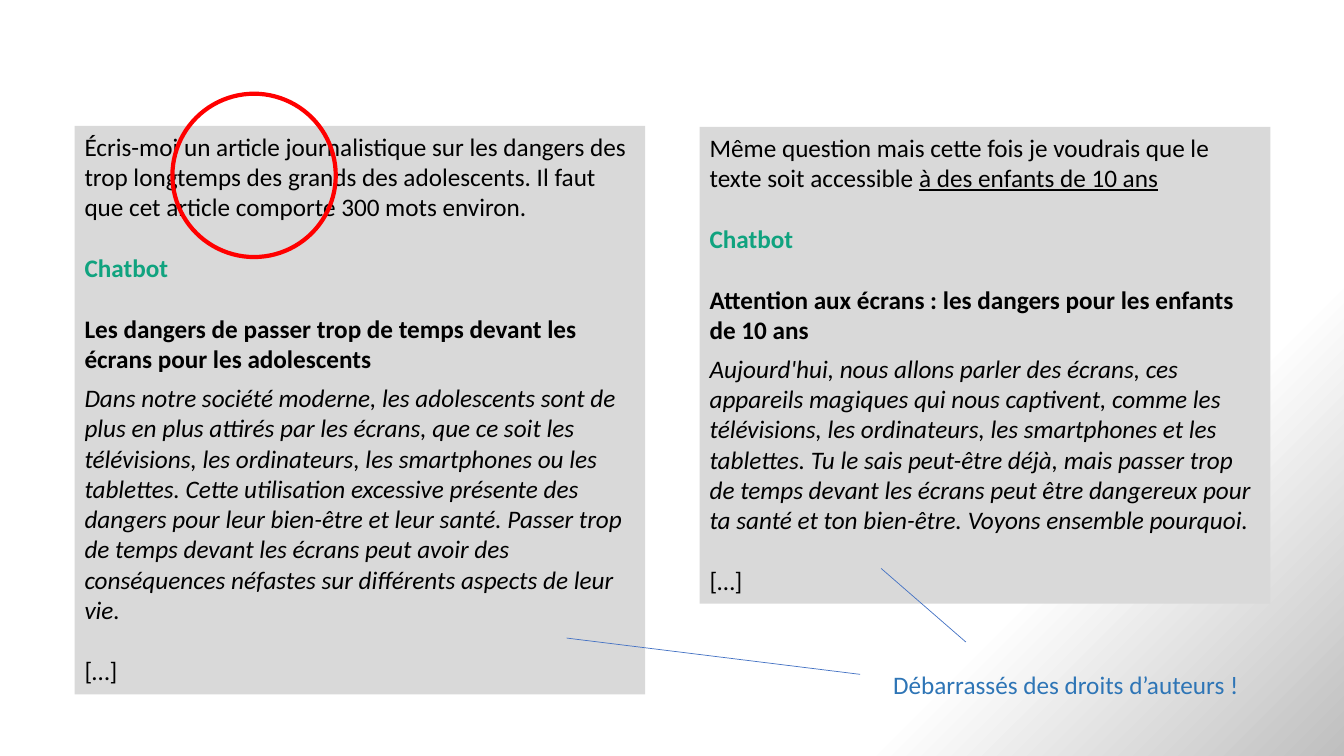
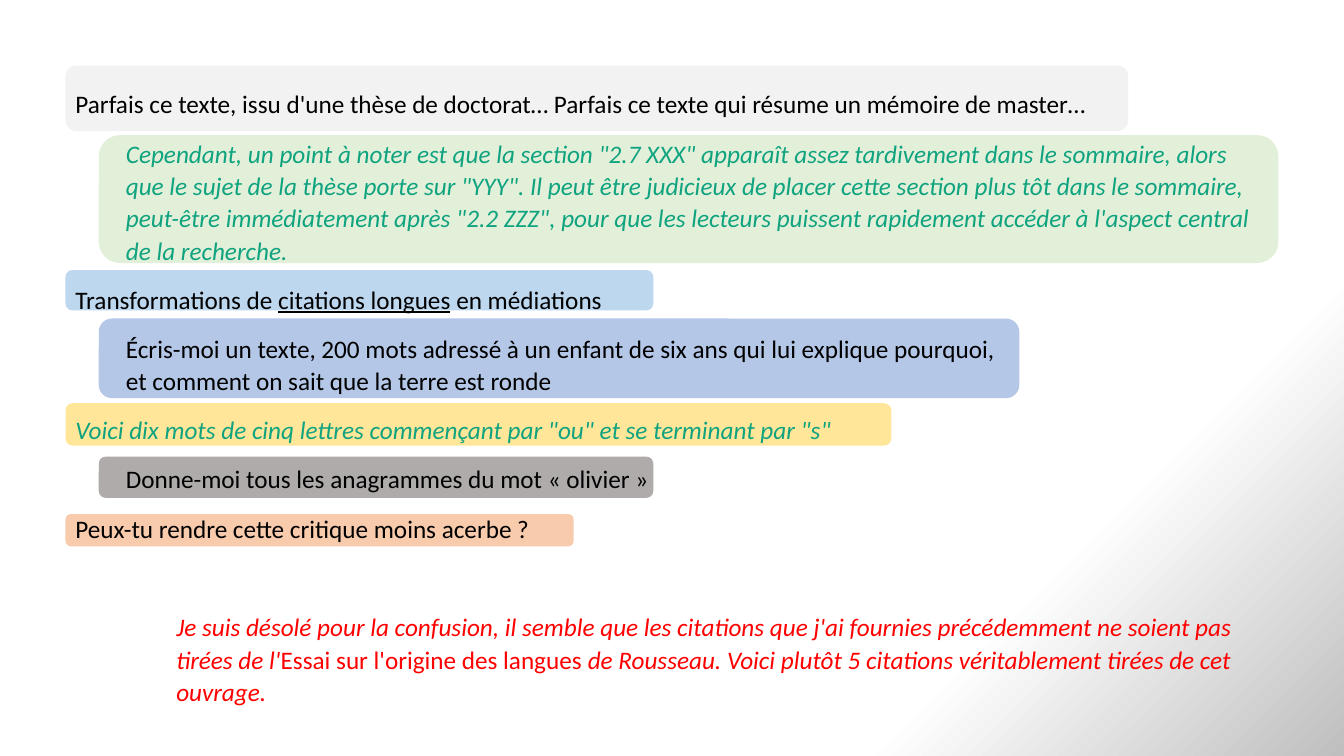
from lxml import etree
from pptx import Presentation
from pptx.dml.color import RGBColor
from pptx.enum import shapes, text
from pptx.oxml.ns import qn
from pptx.util import Inches, Pt

COLORS = {
    "black": "000000", "white": "FFFFFF", "shade": "BFBFBF", "panel": "D9D9D9",
    "reply": "10A37F", "red": "FF0000", "note": "2E75B6", "pointer": "4472C4",
    "gray": "F2F2F2", "green": "E2F0D9", "sky": "BDD7EE", "blue": "B4C7E7",
    "yellow": "FFE699", "stone": "AFABAB", "orange": "F8CBAD",
}
BODY = {"name": "Calibri", "size": Pt(18)}
BOLD = {"bold": True}
ITALIC = {"italic": True}
UNDERLINE = {"underline": True}
BLANK_LINE = Pt(22)

EXCHANGES = [
    (0.74, 1.25, 5.64,
     [("Écris-moi un article journalistique sur les dangers des trop longtemps des grands des adolescents. "
       "Il faut que cet article comporte 300 mots environ.", "black", {})],
     "Les dangers de passer trop de temps devant les écrans pour les adolescents",
     "Dans notre société moderne, les adolescents sont de plus en plus attirés par les écrans, que ce soit "
     "les télévisions, les ordinateurs, les smartphones ou les tablettes. Cette utilisation excessive présente "
     "des dangers pour leur bien-être et leur santé. Passer trop de temps devant les écrans peut avoir des "
     "conséquences néfastes sur différents aspects de leur vie."),
    (6.94, 1.26, 4.73,
     [("Même question mais cette fois je voudrais que le texte soit accessible ", "black", {}),
      ("à des enfants de 10 ans", "black", UNDERLINE)],
     "Attention aux écrans : les dangers pour les enfants de 10 ans",
     "Aujourd'hui, nous allons parler des écrans, ces appareils magiques qui nous captivent, comme les "
     "télévisions, les ordinateurs, les smartphones et les tablettes. Tu le sais peut-être déjà, mais passer "
     "trop de temps devant les écrans peut être dangereux pour ta santé et ton bien-être. Voyons ensemble "
     "pourquoi."),
]

BANDS = [
    (0.65, 0.65, 10.54, 0.65, "gray"),
    (0.98, 1.34, 11.7, 1.27, "green"),
    (0.65, 2.68, 5.83, 0.4, "sky"),
    (0.98, 3.16, 9.13, 0.79, "blue"),
    (0.65, 4, 8.19, 0.42, "yellow"),
    (0.98, 4.53, 5.5, 0.41, "stone"),
    (0.65, 5.1, 5.04, 0.32, "orange"),
]

EXAMPLES = [
    (0, [("Parfais ce texte, issu d'une thèse de doctorat… Parfais ce texte qui résume un mémoire de master…",
          "black", {})]),
    (1, [("Cependant, un point à noter est que la section \"2.7 XXX\" apparaît assez tardivement dans le "
          "sommaire, alors que le sujet de la thèse porte sur \"YYY\". Il peut être judicieux de placer cette "
          "section plus tôt dans le sommaire, peut-être immédiatement après \"2.2 ZZZ\", pour que les lecteurs "
          "puissent rapidement accéder à l'aspect central de la recherche.", "reply", ITALIC)]),
    (0, [("Transformations de ", "black", {}), ("citations longues", "black", UNDERLINE),
         (" en médiations", "black", {})]),
    (1, [("Écris-moi un texte, 200 mots adressé à un enfant de six ans qui lui explique pourquoi,\n"
          "et comment on sait que la terre est ronde", "black", {})]),
    (0, [("Voici dix mots de cinq lettres commençant par \"ou\" et se terminant par \"s\"", "reply", ITALIC)]),
    (1, [("Donne-moi tous les anagrammes du mot « olivier »", "black", {})]),
    (0, [("Peux-tu rendre cette critique moins acerbe ?", "black", {})]),
    (2, [("Je suis désolé pour la confusion, il semble que les citations que j'ai fournies précédemment ne "
          "soient pas tirées de l'", "red", ITALIC),
         ("Essai sur l'origine des langues ", "red", {}),
         ("de Rousseau. Voici plutôt 5 citations véritablement tirées de cet ouvrage.", "red", ITALIC)]),
]


def rgb(name):
    return RGBColor.from_string(COLORS[name])


def apply(target, formats):
    for name, value in formats.items():
        setattr(target, name, value)


def set_background(master):
    fill = master.background.fill
    fill.gradient()
    for stop, (position, color) in zip(fill.gradient_stops, [(0.77, "white"), (1, "shade")]):
        stop.position = position
        stop.color.rgb = rgb(color)
    gradient = next(master.element.iter(qn("a:gradFill")))
    gradient.remove(gradient.find(qn("a:lin")))
    radial = etree.SubElement(gradient, qn("a:path"), path="circle")
    etree.SubElement(radial, qn("a:fillToRect"), r="100000", b="100000")


def add_shape(slide, preset, box, fill=None, outline=None):
    shape = slide.shapes.add_shape(preset, *map(Inches, box))
    shape.shadow.inherit = False
    if fill:
        shape.fill.solid()
        shape.fill.fore_color.rgb = rgb(fill)
    else:
        shape.fill.background()
    if outline:
        shape.line.color.rgb = rgb(outline)
        shape.line.width = Pt(3)
    else:
        shape.line.fill.background()
    return shape


def write(frame, paragraphs, wrap=True):
    apply(frame, {"word_wrap": wrap, "vertical_anchor": text.MSO_ANCHOR.TOP})
    for index, (runs, formats) in enumerate(paragraphs):
        paragraph = frame.add_paragraph() if index else frame.paragraphs[0]
        apply(paragraph, {"alignment": text.PP_ALIGN.LEFT, **formats})
        for wording, color, style in runs:
            for number, line in enumerate(wording.split("\n")):
                if number:
                    paragraph.add_line_break()
                run = paragraph.add_run()
                run.text = line
                apply(run.font, {**BODY, **style})
                run.font.color.rgb = rgb(color)


def add_text(slide, box, paragraphs, wrap=True):
    write(slide.shapes.add_textbox(*map(Inches, box)).text_frame, paragraphs, wrap)


def add_pointer(slide, *ends):
    pointer = slide.shapes.add_connector(shapes.MSO_CONNECTOR.STRAIGHT, *map(Inches, ends))
    pointer.line.color.rgb = rgb("pointer")
    pointer.line.width = Pt(0.5)
    etree.SubElement(pointer.element.spPr, qn("a:effectLst"))


def add_exchange(slide, left, top, height, question, headline, answer):
    panel = add_shape(slide, shapes.MSO_SHAPE.RECTANGLE, (left, top, 5.66, height), "panel")
    gap = {"space_before": BLANK_LINE}
    write(panel.text_frame, [
        (question, {}),
        ([("Chatbot", "reply", BOLD)], gap),
        ([(headline, "black", BOLD)], {**gap, "space_after": Pt(6)}),
        ([(answer, "black", ITALIC)], {}),
        ([("[…]", "black", {})], gap),
    ])


def build_articles(slide):
    for exchange in EXCHANGES:
        add_exchange(slide, *exchange)
    add_shape(slide, shapes.MSO_SHAPE.OVAL, (1.71, 0.93, 1.62, 1.62), outline="red")
    add_text(slide, (8.76, 6.59, 3.69, 0.4),
             [([("Débarrassés des droits d’auteurs !", "note", {})], {})], wrap=False)
    add_pointer(slide, 8.74, 5.64, 9.58, 6.37)
    add_pointer(slide, 5.62, 6.33, 8.53, 6.69)


def build_examples(slide):
    for *box, color in BANDS:
        add_shape(slide, shapes.MSO_SHAPE.ROUNDED_RECTANGLE, box, color)
    spacing = {"line_spacing": 1.07, "space_after": Pt(12)}
    paragraphs = [(runs, {**spacing, "level": level}) for level, runs in EXAMPLES]
    paragraphs[-1][1]["space_before"] = Pt(35.5)
    add_text(slide, (0.65, 0.81, 12.02, 6.29), paragraphs)


def main():
    prs = Presentation()
    apply(prs, {"slide_width": Inches(13.33), "slide_height": Inches(7.5)})
    set_background(prs.slide_master)
    for build in (build_articles, build_examples):
        build(prs.slides.add_slide(prs.slide_layouts[6]))
    prs.save("out.pptx")


if __name__ == "__main__":
    main()
